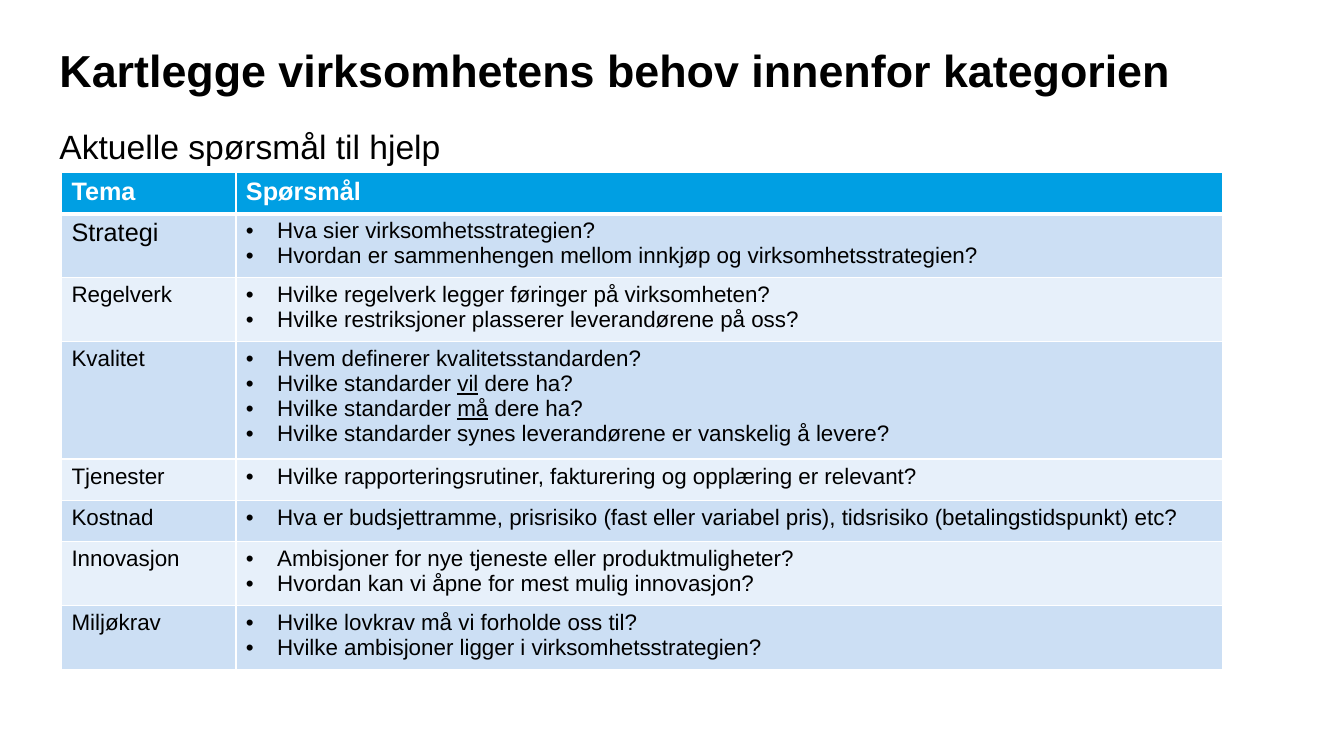
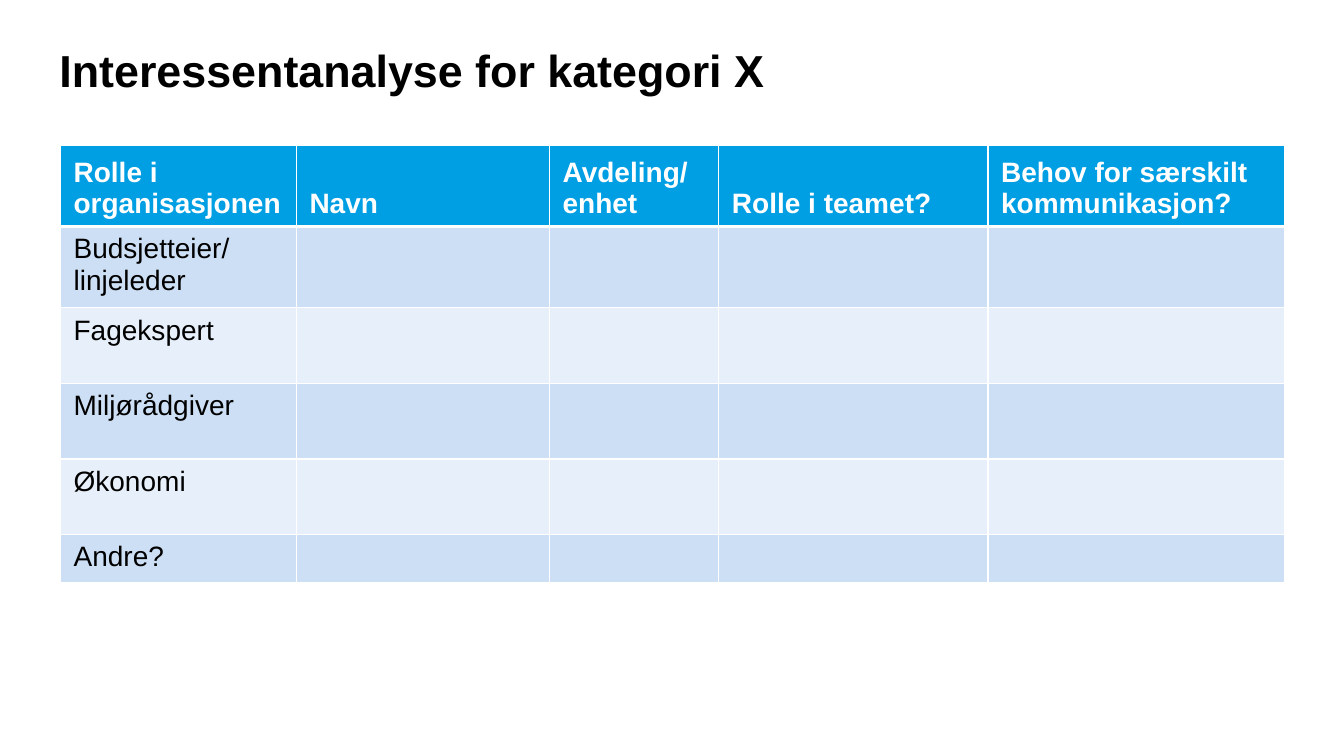
from dataclasses import dataclass

from lxml import etree
from pptx import Presentation
from pptx.dml.color import RGBColor
from pptx.enum import text
from pptx.oxml import ns
from pptx.util import Inches, Pt


@dataclass(frozen=True)
class Theme:
    font: str = "Arial"
    ink: RGBColor = RGBColor(0x00, 0x00, 0x00)
    white: RGBColor = RGBColor(0xFF, 0xFF, 0xFF)
    header: RGBColor = RGBColor(0x00, 0x9F, 0xE3)
    bands: tuple = (RGBColor(0xCC, 0xDF, 0xF4), RGBColor(0xE7, 0xF0, 0xFA))
    title: int = 32
    subtitle: int = 24
    roles: int = 20
    heading: int = 18
    body: int = 16
    grid_line: int = 1
    header_line: int = 3


theme = Theme()


def write(frame, lines, size, color=theme.ink, bold=False, bullet=False, spacing=None):
    """Write one paragraph per line; words between underscores are underlined."""
    frame.word_wrap = True
    for number, line in enumerate(lines):
        paragraph = frame.add_paragraph() if number else frame.paragraphs[0]
        if spacing:
            paragraph.line_spacing = spacing
        if bullet:
            properties = paragraph._p.get_or_add_pPr()
            properties.set("marL", str(Inches(0.31)))
            properties.set("indent", str(-Inches(0.31)))
            etree.SubElement(properties, ns.qn("a:buFont"), typeface=theme.font)
            etree.SubElement(properties, ns.qn("a:buChar"), char="•")
        for part, words in enumerate(line.split("_")):
            run = paragraph.add_run()
            run.text = words
            run.font.name = theme.font
            run.font.size = Pt(size)
            run.font.bold = bold
            run.font.color.rgb = color
            if part % 2:
                run.font.underline = True


def add_grid(slide, left, top, widths, heights):
    """Add a table with a coloured header, banded rows and white borders."""
    table = slide.shapes.add_table(
        len(heights), len(widths), Inches(left), Inches(top),
        Inches(sum(widths)), Inches(sum(heights))).table
    for column, width in zip(table.columns, widths):
        column.width = Inches(width)
    for number, (row, height) in enumerate(zip(table.rows, heights)):
        row.height = Inches(height)
        for cell in row.cells:
            properties = cell._tc.get_or_add_tcPr()
            for edge in "LRB" if number else "LRTB":
                thick = number == 0 and edge == "B"
                width = theme.header_line if thick else theme.grid_line
                border = etree.SubElement(properties, ns.qn(f"a:ln{edge}"), w=str(Pt(width)))
                fill = etree.SubElement(border, ns.qn("a:solidFill"))
                etree.SubElement(fill, ns.qn("a:srgbClr"), val=str(theme.white))
            cell.fill.solid()
            cell.fill.fore_color.rgb = theme.bands[(number - 1) % 2] if number else theme.header
    return table


deck = Presentation()
deck.slide_width, deck.slide_height = Inches(13.33), Inches(7.5)

# Titles
needs_title = ("Kartlegge virksomhetens behov innenfor kategorien", 0.48, 0.77,
               dict(size=theme.title, bold=True, spacing=0.9))
needs_subtitle = ("Aktuelle spørsmål til hjelp", 1.25, 0.59, dict(size=theme.subtitle))
stakeholder_title = ("Interessentanalyse for kategori X", *needs_title[1:])

slides = []
for headings in ([needs_title, needs_subtitle], [stakeholder_title]):
    slide = deck.slides.add_slide(deck.slide_layouts[6])
    slides.append(slide)
    for words, top, height, style in headings:
        frame = slide.shapes.add_textbox(
            Inches(0.59), Inches(top), Inches(12.14), Inches(height)).text_frame
        frame.margin_left = frame.margin_right = frame.margin_top = frame.margin_bottom = 0
        write(frame, [words], **style)
needs_slide, stakeholder_slide = slides

# Questions by topic
questions = {
    "Strategi": ["Hva sier virksomhetsstrategien?",
                 "Hvordan er sammenhengen mellom innkjøp og virksomhetsstrategien?"],
    "Regelverk": ["Hvilke regelverk legger føringer på virksomheten?",
                  "Hvilke restriksjoner plasserer leverandørene på oss?"],
    "Kvalitet": ["Hvem definerer kvalitetsstandarden?",
                 "Hvilke standarder _vil_ dere ha?",
                 "Hvilke standarder _må_ dere ha?",
                 "Hvilke standarder synes leverandørene er vanskelig å levere?"],
    "Tjenester": ["Hvilke rapporteringsrutiner, fakturering og opplæring er relevant?"],
    "Kostnad": ["Hva er budsjettramme, prisrisiko (fast eller variabel pris), "
                "tidsrisiko (betalingstidspunkt) etc?"],
    "Innovasjon": ["Ambisjoner for nye tjeneste eller produktmuligheter?",
                   "Hvordan kan vi åpne for mest mulig innovasjon?"],
    "Miljøkrav": ["Hvilke lovkrav må vi forholde oss til?",
                  "Hvilke ambisjoner ligger i virksomhetsstrategien?"],
}
row_heights = [0.41] + [max(0.41, 0.1 + 0.25 * len(asked)) for asked in questions.values()]
topics = add_grid(needs_slide, 0.61, 1.71, [1.73, 9.79], row_heights)
for column, heading in enumerate(["Tema", "Spørsmål"]):
    write(topics.cell(0, column).text_frame, [heading],
          size=theme.heading, color=theme.white, bold=True)
for row, (topic, asked) in enumerate(questions.items(), start=1):
    topic_size = theme.heading if topic == "Strategi" else theme.body
    write(topics.cell(row, 0).text_frame, [topic], size=topic_size)
    write(topics.cell(row, 1).text_frame, asked, size=theme.body, bullet=True)

# Stakeholders by role
role_headings = ["Rolle i organisasjonen", "Navn", "Avdeling/ enhet",
                 "Rolle i teamet?", "Behov for særskilt kommunikasjon?"]
roles = [["Budsjetteier/", "linjeleder"], ["Fagekspert"], ["Miljørådgiver"],
         ["Økonomi"], ["Andre?"]]
stakeholders = add_grid(stakeholder_slide, 0.6, 1.44,
                        [2.34, 2.51, 1.68, 2.67, 2.94], [0.75] * 5 + [0.45])
for cell in stakeholders.iter_cells():
    cell.margin_left = cell.margin_right = Inches(0.13)
    cell.margin_top = cell.margin_bottom = Inches(0.07)
for column, heading in enumerate(role_headings):
    cell = stakeholders.cell(0, column)
    cell.vertical_anchor = text.MSO_ANCHOR.BOTTOM
    write(cell.text_frame, [heading], size=theme.roles, color=theme.white, bold=True)
for row, role in enumerate(roles, start=1):
    write(stakeholders.cell(row, 0).text_frame, role, size=theme.roles)

deck.save("out.pptx")
